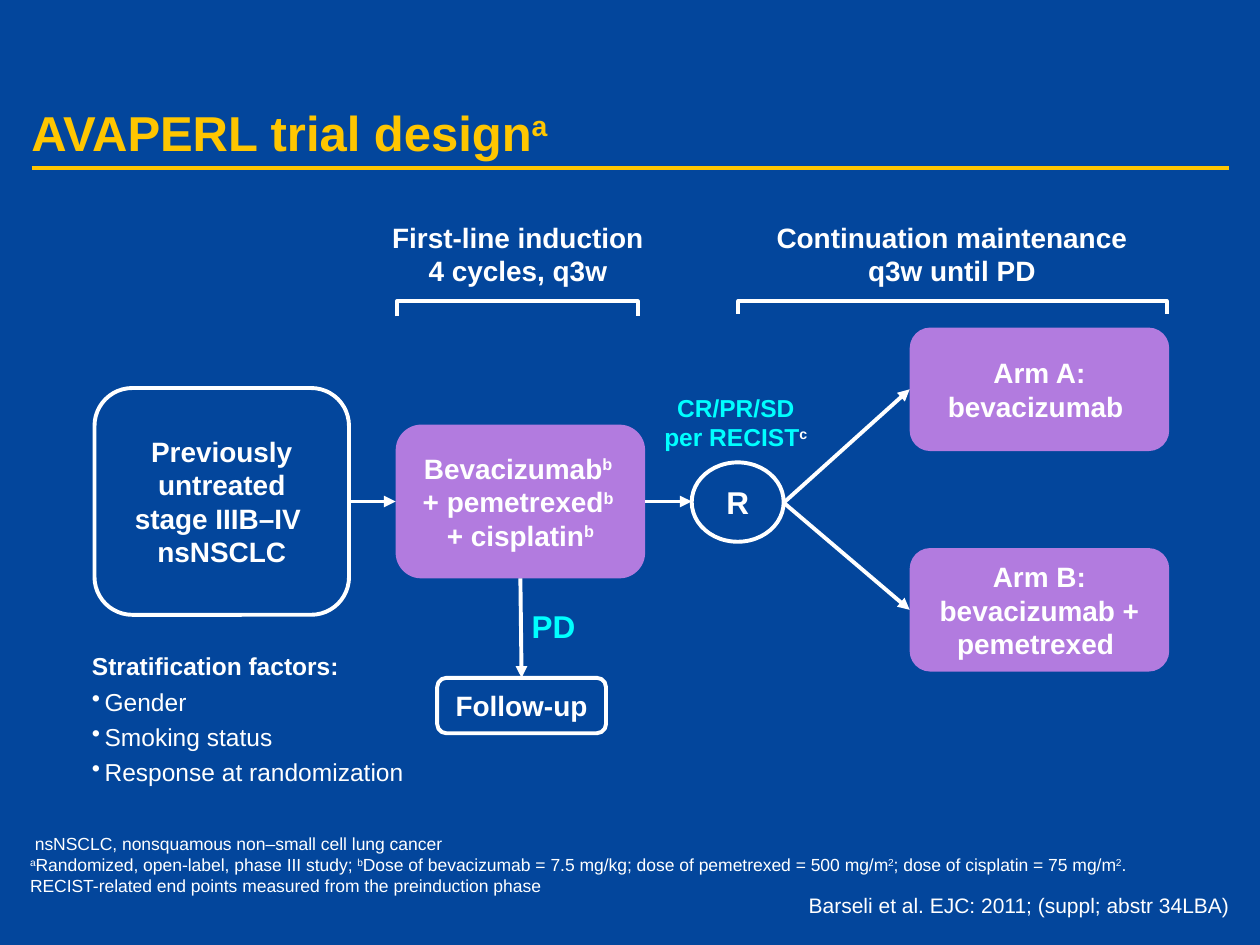
from dataclasses import dataclass

from lxml.etree import SubElement
from pptx import Presentation
from pptx.dml.color import RGBColor
from pptx.enum.shapes import MSO_CONNECTOR, MSO_SHAPE
from pptx.enum.text import MSO_ANCHOR, PP_ALIGN
from pptx.oxml.ns import qn
from pptx.util import Inches, Pt


@dataclass(frozen=True)
class Theme:
    """Colours, font and type sizes of the slide."""
    back: RGBColor = RGBColor(0x03, 0x46, 0x9C)
    gold: RGBColor = RGBColor(0xFF, 0xC6, 0x00)
    white: RGBColor = RGBColor(0xFF, 0xFF, 0xFF)
    cyan: RGBColor = RGBColor(0x00, 0xFF, 0xFF)
    drug: RGBColor = RGBColor(0xB2, 0x7B, 0xDF)
    face: str = "Arial"
    title: Pt = Pt(28)
    mark: Pt = Pt(18)
    body: Pt = Pt(16)
    label: Pt = Pt(14)
    cite: Pt = Pt(12)
    note: Pt = Pt(10)
    line: Pt = Pt(2.25)


THEME = Theme()
PLAIN = (0.1, 0.05, 0.1, 0.05)
TIGHT = (0.02, 0.05, 0.02, 0.05)
NONE = (0, 0, 0, 0)


def apply(item, values):
    """Set each named value on the item."""
    for name, value in values.items():
        setattr(item, name, value)


def write(para, text, size, color=THEME.white, bold=True, high=None):
    """Fill a paragraph, raising the parts held between carets."""
    for spot, part in enumerate(text.split("^")):
        if not part:
            continue
        run = para.add_run()
        run.text = part
        apply(run.font, {"name": THEME.face, "size": size, "bold": bold})
        raised = spot % 2 == 1
        run.font.color.rgb = high if raised and high else color
        if raised:
            run.font._element.set("baseline", "30000")


def fill_text(shape, lines, size, pad=PLAIN, anchor=MSO_ANCHOR.TOP,
              align=PP_ALIGN.CENTER, wrap=True, **style):
    """Lay out one paragraph for each line in the shape."""
    frame = shape.text_frame
    sides = ("margin_left", "margin_top", "margin_right", "margin_bottom")
    apply(frame, {side: Inches(gap) for side, gap in zip(sides, pad)})
    apply(frame, {"word_wrap": wrap, "vertical_anchor": anchor})
    for spot, line in enumerate(lines):
        para = frame.add_paragraph() if spot else frame.paragraphs[0]
        para.alignment = align
        write(para, line, size, **style)


def label(slide, place, lines, size, **style):
    """Add a text box."""
    box = slide.shapes.add_textbox(*map(Inches, place))
    fill_text(box, lines, size, **style)
    return box


def stroke(item, color=THEME.white):
    """Give an item the common line."""
    item.line.color.rgb = color
    item.line.width = THEME.line


def node(slide, place, lines, fill=None, kind=MSO_SHAPE.ROUNDED_RECTANGLE,
         size=THEME.body, pad=TIGHT):
    """Add a filled or outlined step of the trial."""
    shape = slide.shapes.add_shape(kind, *map(Inches, place))
    shape.shadow.inherit = False
    if fill:
        shape.fill.solid()
        shape.fill.fore_color.rgb = fill
        shape.line.fill.background()
    else:
        shape.fill.background()
        stroke(shape)
    fill_text(shape, lines, size, pad, MSO_ANCHOR.MIDDLE)
    return shape


def link(slide, start, end, color=THEME.white, head=True, source=None, target=None):
    """Draw a line and join it to any source or target side."""
    line = slide.shapes.add_connector(
        MSO_CONNECTOR.STRAIGHT, *map(Inches, start + end))
    stroke(line, color)
    if source:
        line.begin_connect(*source)
    if target:
        line.end_connect(*target)
    if head:
        SubElement(line.line._get_or_add_ln(), qn("a:tailEnd"), type="triangle")
    SubElement(line._element.spPr, qn("a:effectLst"))


def bracket(slide, left, right, top=2.39, drop=0.12):
    """Draw an open bracket over one phase."""
    base = top + drop
    pen = slide.shapes.build_freeform(Inches(left), Inches(base))
    points = [(left, top), (right, top), (right, base)]
    pen.add_line_segments([tuple(map(Inches, p)) for p in points], close=False)
    shape = pen.convert_to_shape()
    shape.shadow.inherit = False
    shape.fill.background()
    stroke(shape)


def factors(slide):
    """Add the list of stratification factors."""
    place = (0.73, 5.17, 3.29, 1.03)
    items = ["Gender", "Smoking status", "Response at randomization"]
    box = label(slide, place, ["Stratification factors:"] + items, THEME.label,
                pad=NONE, align=PP_ALIGN.LEFT, bold=False)
    first, *rest = box.text_frame.paragraphs
    first.runs[0].font.bold = True
    for para in (first, *rest):
        para.space_after = Pt(3.3)
    for para in rest:
        props = para._p.get_or_add_pPr()
        props.set("marL", str(Inches(0.1)))
        props.set("indent", str(-Inches(0.1)))
        SubElement(props, qn("a:buChar"), char="•")


def flow(slide):
    """Add the steps of the trial and the arrows between them."""
    entry = node(slide, (0.75, 3.08, 2.02, 1.8),
                 ["Previously", "untreated", "stage IIIB–IV ", "nsNSCLC"],
                 pad=(0, 0.05, 0, 0.05))
    drugs = node(slide, (3.14, 3.37, 1.98, 1.22),
                 ["Bevacizumab^b ^", "+ pemetrexed^b ^", "+ cisplatin^b^"],
                 THEME.drug)
    node(slide, (5.49, 3.67, 0.73, 0.63), ["R"], kind=MSO_SHAPE.OVAL,
         size=THEME.mark, pad=PLAIN)
    follow = node(slide, (3.47, 5.38, 1.34, 0.44), ["Follow-up"])
    arms = [(2.6, ["Arm A:", "bevacizumab "]),
            (4.35, ["Arm B:", "bevacizumab + pemetrexed "])]
    for top, lines in arms:
        arm = node(slide, (7.22, top, 2.06, 0.98), lines, THEME.drug)
        link(slide, (6.22, 3.99), (7.22, top + 0.49), target=(arm, 1))
    link(slide, (2.77, 3.98), (3.14, 3.98), source=(entry, 3), target=(drugs, 1))
    link(slide, (5.12, 3.98), (5.49, 3.98), source=(drugs, 3))
    link(slide, (4.13, 4.59), (4.14, 5.38), source=(drugs, 2), target=(follow, 0))


def labels(slide):
    """Add the phase headings and the words beside the arrows."""
    label(slide, (2.82, 1.7, 2.58, 0.64),
          ["First-line induction", "4 cycles, q3w"], THEME.body)
    label(slide, (6.05, 1.7, 3.01, 0.64),
          ["Continuation maintenance", "q3w until PD"], THEME.body, wrap=False)
    bracket(slide, 3.15, 5.06)
    bracket(slide, 5.86, 9.26, drop=0.1)
    label(slide, (5.14, 3.07, 1.4, 0.57), ["CR/PR/SD", "per RECIST^c^"],
          THEME.label, color=THEME.cyan, high=THEME.white)
    label(slide, (4.12, 4.77, 0.55, 0.4), ["PD"], THEME.mark,
          color=THEME.cyan, align=PP_ALIGN.LEFT, wrap=False)


def notes(slide):
    """Add the footnotes and the citation."""
    lines = [
        " nsNSCLC, nonsquamous non–small cell lung cancer",
        "^a^Randomized, open-label, phase III study; ^b^Dose of bevacizumab = "
        "7.5 mg/kg; dose of pemetrexed = 500 mg/m^2^; dose of cisplatin = "
        "75 mg/m^2^.",
        "RECIST-related end points measured from the preinduction phase",
    ]
    label(slide, (0.14, 6.56, 9.13, 0.61), lines, THEME.note,
          align=PP_ALIGN.LEFT, bold=False)
    label(slide, (6.39, 7.08, 3.37, 0.2),
          ["Barseli et al. EJC: 2011; (suppl; abstr 34LBA)"], THEME.cite,
          pad=NONE, anchor=MSO_ANCHOR.BOTTOM, align=PP_ALIGN.RIGHT,
          wrap=False, bold=False)


def main():
    """Build and save the slide."""
    deck = Presentation()
    apply(deck, {"slide_width": Inches(10), "slide_height": Inches(7.5)})
    slide = deck.slides.add_slide(deck.slide_layouts[6])
    slide.background.fill.solid()
    slide.background.fill.fore_color.rgb = THEME.back
    link(slide, (0.25, 1.33), (9.75, 1.33), THEME.gold, head=False)
    label(slide, (0.25, 0.25, 9.5, 1.03), ["AVAPERL trial design^a^"],
          THEME.title, pad=(0, 0.05, 0, 0), anchor=MSO_ANCHOR.BOTTOM,
          align=PP_ALIGN.LEFT, color=THEME.gold)
    notes(slide)
    factors(slide)
    flow(slide)
    labels(slide)
    deck.save("out.pptx")


if __name__ == "__main__":
    main()
